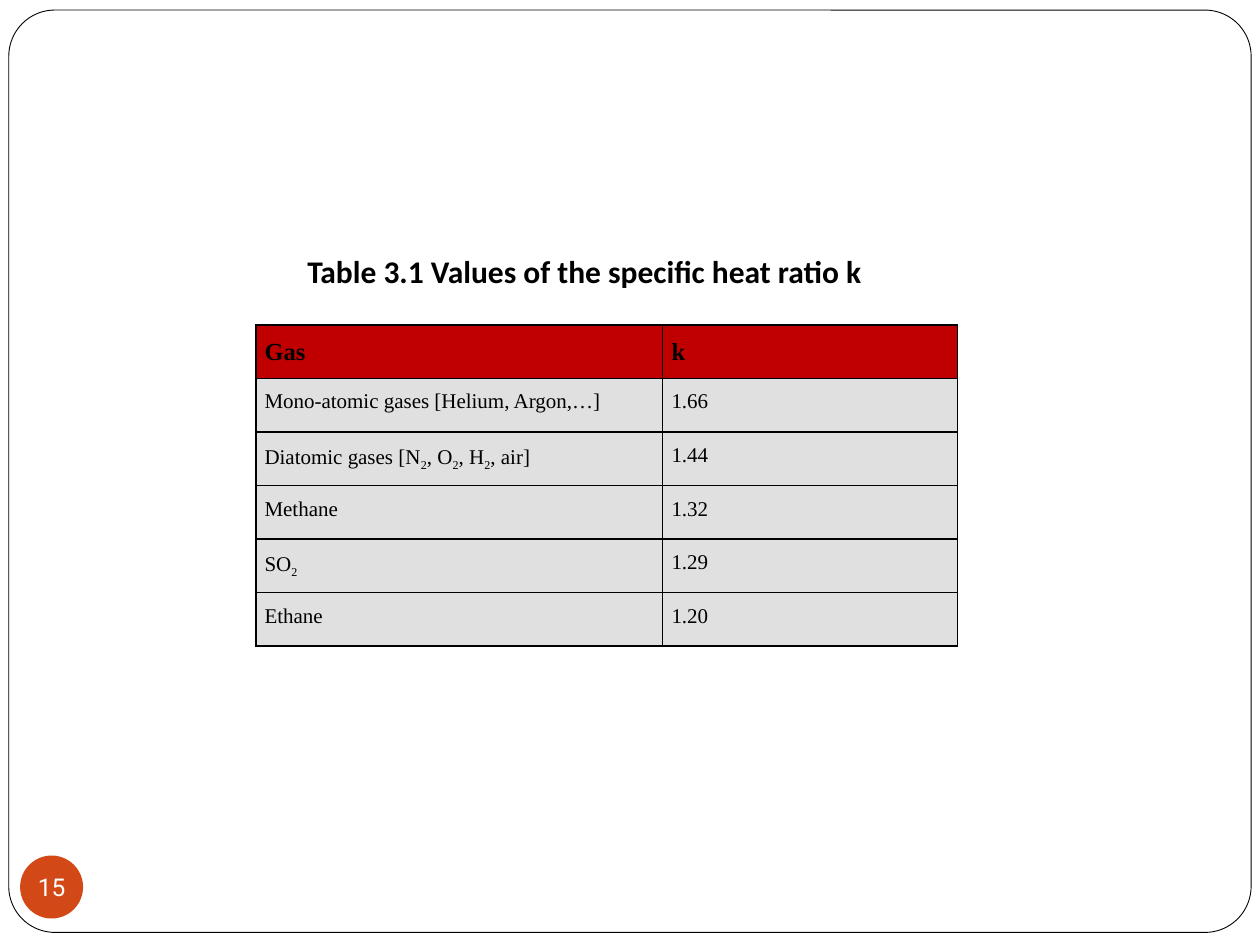
from lxml import etree
from pptx import Presentation
from pptx.dml.color import RGBColor
from pptx.enum.shapes import MSO_SHAPE
from pptx.enum.text import MSO_ANCHOR, PP_ALIGN
from pptx.oxml.ns import qn
from pptx.util import Inches, Pt

ROUND, OVAL = MSO_SHAPE.ROUNDED_RECTANGLE, MSO_SHAPE.OVAL
MIDDLE = MSO_ANCHOR.MIDDLE
CENTER, JUSTIFY = PP_ALIGN.CENTER, PP_ALIGN.JUSTIFY
BLACK = RGBColor(0x00, 0x00, 0x00)
WHITE = RGBColor(0xFF, 0xFF, 0xFF)
ORANGE = RGBColor(0xD3, 0x48, 0x17)
RED = RGBColor(0xC0, 0x00, 0x00)
GRAY = RGBColor(0xE1, 0xE0, 0xE0)

# An underscore lowers the character after it.
GASES = [
    ("Gas", "k"),
    ("Mono-atomic gases [Helium, Argon,…]", "1.66"),
    ("Diatomic gases [N_2, O_2, H_2, air]", "1.44"),
    ("Methane", "1.32"),
    ("SO_2", "1.29"),
    ("Ethane", "1.20"),
]


class Deck:
    """Holds the style and the current slide."""
    serif, sans, digit = "Times New Roman", "Calibri", "Roboto"

    def __init__(self):
        self.prs = Presentation()
        self.prs.slide_width, self.prs.slide_height = Inches(10), Inches(7.5)
        self.slide = self.prs.slides.add_slide(self.prs.slide_layouts[6])

    def label(self, para, text, face, size, color, align, bold=False):
        """Fill a paragraph, with subscripts where the text marks them."""
        para.alignment = align
        font = para.font
        font.name, font.size, font.bold = face, Pt(size), bold
        font.color.rgb = color
        plain, *rest = text.split("_")
        para.add_run().text = plain
        for part in rest:
            sub = para.add_run()
            sub.text = part[0]
            sub.font._element.set("baseline", "-25000")
            if part[1:]:
                para.add_run().text = part[1:]

    def shape(self, kind, box, fill):
        shape = self.slide.shapes.add_shape(kind, *map(Inches, box))
        shape.shadow.inherit = False
        shape.fill.solid()
        shape.fill.fore_color.rgb = fill
        shape.line.fill.background()
        return shape

    def frame(self, box):
        shape = self.shape(ROUND, box, WHITE)
        shape.adjustments[0] = 0.05
        shape.line.color.rgb = BLACK
        shape.line.width = Pt(0.5)

    def badge(self, box, text):
        body = self.shape(OVAL, box, ORANGE).text_frame
        body.margin_left = body.margin_right = 0
        body.margin_top = body.margin_bottom = 0
        body.word_wrap = False
        body.vertical_anchor = MIDDLE
        self.label(body.paragraphs[0], text, self.digit, 14, WHITE, CENTER)

    def title(self, box, text):
        body = self.slide.shapes.add_textbox(*map(Inches, box)).text_frame
        body.word_wrap = True
        para = body.paragraphs[0]
        para.space_after = Pt(10)
        self.label(para, text, self.sans, 18, BLACK, JUSTIFY, True)

    def border(self, cell):
        props = cell._tc.get_or_add_tcPr()
        for i, side in enumerate(("lnL", "lnR", "lnT", "lnB")):
            line = etree.Element(qn("a:" + side), w=str(Pt(1)))
            fill = etree.SubElement(line, qn("a:solidFill"))
            etree.SubElement(fill, qn("a:srgbClr"), val=str(BLACK))
            props.insert(i, line)

    def table(self, box, widths, rows):
        grid = self.slide.shapes.add_table(
            len(rows), len(widths), *map(Inches, box)).table
        for col, width in zip(grid.columns, widths):
            col.width = Inches(width)
        for r, row in enumerate(rows):
            head = r == 0
            for c, text in enumerate(row):
                cell = grid.cell(r, c)
                cell.margin_left = cell.margin_right = Inches(0.07)
                cell.margin_top = cell.margin_bottom = 0
                cell.fill.solid()
                cell.fill.fore_color.rgb = RED if head else GRAY
                self.border(cell)
                para = cell.text_frame.paragraphs[0]
                para.line_spacing = 1.5
                self.label(para, text, self.serif, 14 if head else 12,
                           BLACK, JUSTIFY, head)


def main():
    deck = Deck()
    deck.frame((0.07, 0.08, 9.86, 7.32))
    deck.badge((0.16, 6.79, 0.5, 0.5), "15")
    deck.table((2.03, 2.58, 5.57, 2.55), (3.23, 2.34), GASES)
    deck.title((2.34, 1.95, 4.92, 0.47),
               "Table 3.1 Values of the specific heat ratio k")
    deck.prs.save("out.pptx")


if __name__ == "__main__":
    main()
